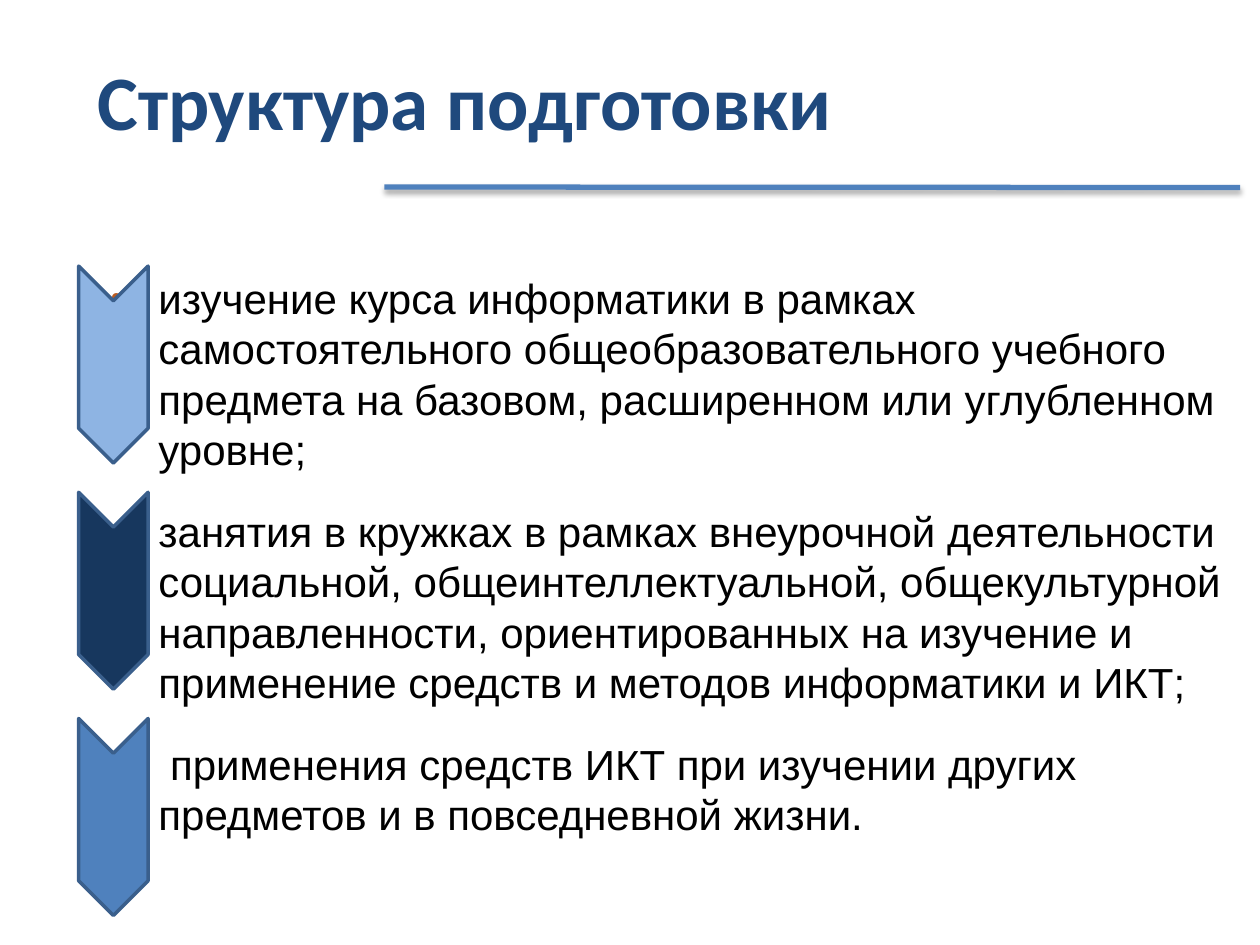
from lxml import etree
from pptx import Presentation
from pptx import util as u
from pptx.dml.color import RGBColor
from pptx.enum import shapes, text
from pptx.oxml import ns

NAVY = RGBColor(0x1F, 0x49, 0x7D)
BLACK = RGBColor(0x00, 0x00, 0x00)
RULE_BLUE = RGBColor(0x4F, 0x81, 0xBD)
OUTLINE = RGBColor(0x3A, 0x5F, 0x8C)
BULLET = RGBColor(0xB9, 0x5B, 0x22)
CHEVRON_FILLS = [RGBColor(0x8E, 0xB4, 0xE3), RGBColor(0x17, 0x37, 0x5E), RULE_BLUE]

TITLE = "Структура подготовки"
FORMS = [
    "изучение курса информатики в рамках самостоятельного общеобразовательного "
    "учебного предмета на базовом, расширенном или углубленном уровне;",
    "занятия в кружках в рамках внеурочной деятельности социальной, "
    "общеинтеллектуальной, общекультурной направленности, ориентированных на "
    "изучение и применение средств и методов информатики и ИКТ;",
    " применения средств ИКТ при изучении других предметов и в повседневной жизни.",
]


def add_child(parent, tag, **attributes):
    return etree.SubElement(parent, ns.qn(tag), attributes)


def place(box, left, top, width, height):
    box.left, box.top = u.Cm(left), u.Cm(top)
    box.width, box.height = u.Cm(width), u.Cm(height)


def format_spans(para, font_name, size, color, bold=False):
    for span in para.runs:
        span.font.name = font_name
        span.font.size = u.Pt(size)
        span.font.bold = bold
        span.font.color.rgb = color


def set_bullet(para):
    properties = para._p.get_or_add_pPr()
    indent = u.Cm(0.96)
    properties.set("marL", str(indent))
    properties.set("indent", str(-indent))
    add_child(add_child(properties, "a:buClr"), "a:srgbClr", val=str(BULLET))
    add_child(properties, "a:buSzPct", val="76000")
    add_child(properties, "a:buFont", typeface="Arial")
    add_child(properties, "a:buChar", char="•")


def fill_title(box):
    place(box, 1.71, 0.64, 22.66, 2.74)
    frame = box.text_frame
    frame.text = TITLE
    frame.auto_size = text.MSO_AUTO_SIZE.NONE
    frame.vertical_anchor = text.MSO_ANCHOR.MIDDLE
    para = frame.paragraphs[0]
    para.alignment = text.PP_ALIGN.LEFT
    format_spans(para, "Calibri", 44, NAVY, bold=True)


def fill_list(box):
    place(box, 1.98, 5.36, 22.99, 12.5)
    frame = box.text_frame
    frame.text = "\n".join(FORMS)
    frame.auto_size = text.MSO_AUTO_SIZE.NONE
    frame.vertical_anchor = text.MSO_ANCHOR.TOP
    for index, para in enumerate(frame.paragraphs):
        set_bullet(para)
        para.line_spacing = 1.0
        para.space_before = u.Pt(18 if index else 0)
        format_spans(para, "Arial", 24, BLACK)


def add_rule(page):
    rule = page.shapes.add_connector(
        shapes.MSO_CONNECTOR.STRAIGHT, u.Cm(7.75), u.Cm(3.77), u.Cm(25), u.Cm(3.78))
    rule.line.color.rgb = RULE_BLUE
    rule.line.width = u.Pt(3)
    effects = add_child(rule._element.spPr, "a:effectLst")
    shadow = add_child(effects, "a:outerShdw", blurRad=str(u.Pt(3.1)),
                       dist=str(u.Pt(1.8)), dir="5400000", rotWithShape="0")
    color = add_child(shadow, "a:srgbClr", val=str(BLACK))
    add_child(color, "a:alpha", val="35000")


def add_chevron(page, top, color):
    chevron = page.shapes.add_shape(
        shapes.MSO_SHAPE.CHEVRON, u.Cm(0.3), u.Cm(top), u.Cm(3.97), u.Cm(1.4))
    chevron.rotation = 90
    chevron.shadow.inherit = False
    chevron.fill.solid()
    chevron.fill.fore_color.rgb = color
    chevron.line.color.rgb = OUTLINE
    chevron.line.width = u.Pt(2)


def main():
    deck = Presentation()
    deck.slide_width, deck.slide_height = u.Cm(25.4), u.Cm(19.05)
    page = deck.slides.add_slide(deck.slide_layouts[1])
    fill_title(page.shapes.title)
    fill_list(page.placeholders[1])
    add_rule(page)
    for index, color in enumerate(CHEVRON_FILLS):
        add_chevron(page, 6.65 + 4.56 * index, color)
    deck.save("out.pptx")


if __name__ == "__main__":
    main()
